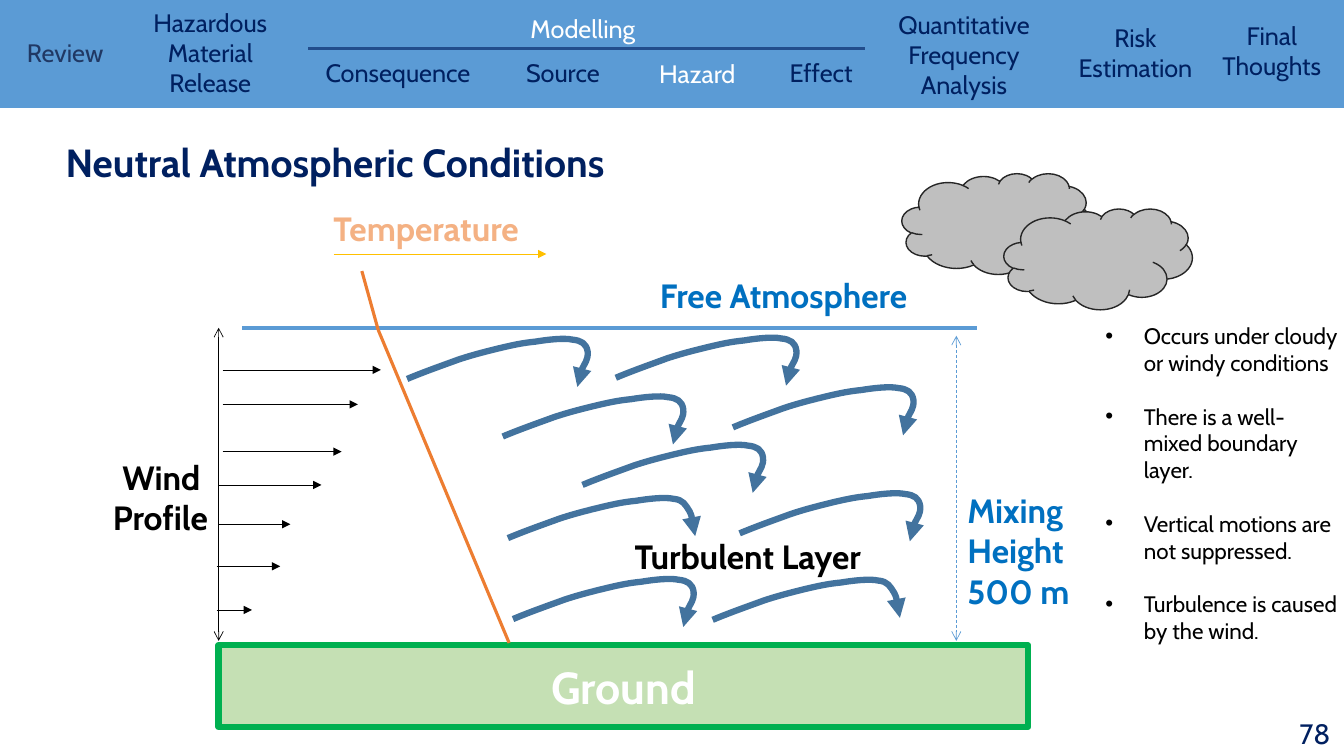
import pptx
import pptx.dml.color
import pptx.enum.dml
import pptx.enum.shapes
import pptx.enum.text
import pptx.oxml
import pptx.oxml.ns
import pptx.util
from lxml import etree

Cm = pptx.util.Cm
Pt = pptx.util.Pt
qn = pptx.oxml.ns.qn
ALIGN = pptx.enum.text.PP_ALIGN
ANCHOR = pptx.enum.text.MSO_ANCHOR
SHAPE = pptx.enum.shapes.MSO_SHAPE
DASH = pptx.enum.dml.MSO_LINE.DASH

NAVY, WHITE, BLACK = "002060", "FFFFFF", "000000"
SKY, BLUE, ORANGE = "5B9BD5", "0070C0", "ED7D31"


def colour(value):
    return pptx.dml.color.RGBColor.from_string(value)


def assign(target, values):
    for name, value in values.items():
        setattr(target, name, value)


class Diagram:
    font = "Cabin"

    def __init__(self, slide):
        self.slide = slide
        self.shapes = slide.shapes

    def fill_text(self, holder, lines, size, tint, bold=False, align=ALIGN.LEFT,
                  anchor=ANCHOR.TOP, gap=0, bullet=None):
        frame = holder.text_frame
        assign(frame, {"word_wrap": True, "vertical_anchor": anchor,
                       "auto_size": pptx.enum.text.MSO_AUTO_SIZE.NONE})
        frame.text = "\n".join(lines)
        for paragraph in frame.paragraphs:
            assign(paragraph, {"alignment": align, "space_after": Pt(gap)})
            assign(paragraph.runs[0].font,
                   {"name": self.font, "size": Pt(size), "bold": bold})
            paragraph.runs[0].font.color.rgb = colour(tint)
            if bullet:
                properties = paragraph._p.get_or_add_pPr()
                properties.set("marL", str(Cm(0.97)))
                properties.set("indent", str(-Cm(0.97)))
                etree.SubElement(properties, qn("a:buFont")).set("typeface", "Arial")
                etree.SubElement(properties, qn("a:buChar")).set("char", bullet)

    def title(self, place, text, **style):
        holder = self.shapes.title
        assign(holder, dict(zip(("left", "top", "width", "height"), map(Cm, place))))
        self.fill_text(holder, [text], **style)

    def text(self, place, *lines, **style):
        box = self.shapes.add_textbox(*map(Cm, place))
        self.fill_text(box, lines, **style)
        return box

    def shape(self, kind, place, fill, edge=None, width=1):
        body = self.shapes.add_shape(kind, *map(Cm, place))
        body.shadow.inherit = False
        body.fill.solid()
        body.fill.fore_color.rgb = colour(fill)
        if edge:
            self.stroke(body, edge, width)
        else:
            body.line.fill.background()
        return body

    def stroke(self, target, tint, width, dash=None, head=None, tail=None):
        target.line.color.rgb = colour(tint)
        assign(target.line, {"width": Pt(width), "dash_style": dash})
        outline = target._element.spPr.get_or_add_ln()
        for end, kind in (("a:headEnd", head), ("a:tailEnd", tail)):
            if kind:
                etree.SubElement(outline, qn(end)).set("type", kind)

    def line(self, start, finish, tint, width, **ends):
        connector = self.shapes.add_connector(
            pptx.enum.shapes.MSO_CONNECTOR.STRAIGHT, *map(Cm, start + finish))
        self.stroke(connector, tint, width, **ends)
        etree.SubElement(connector._element.spPr, qn("a:effectLst"))

    def curve(self, start, offsets, tint, width, **ends):
        left, top = start
        builder = self.shapes.build_freeform(Cm(left), Cm(top))
        builder.add_line_segments(
            [(Cm(left + dx), Cm(top + dy)) for dx, dy in offsets], close=False)
        eddy = builder.convert_to_shape()
        eddy.shadow.inherit = False
        eddy.fill.background()
        outline = next(eddy._element.iter(qn("a:path")))
        segments = outline.findall(qn("a:lnTo"))
        for first in range(0, len(segments), 3):
            bezier = etree.SubElement(outline, qn("a:cubicBezTo"))
            for segment in segments[first:first + 3]:
                bezier.append(segment[0])
                outline.remove(segment)
        self.stroke(eddy, tint, width, **ends)


NAVIGATION = [
    ("Review", (0.43, 0.81, 2.82, 1.02), "203864", ALIGN.LEFT),
    ("Hazardous Material Release", (3.23, 0.05, 4.14, 2.54), NAVY, ALIGN.CENTER),
    ("Modelling", (7.77, 0.2, 13.84, 1.02), WHITE, ALIGN.CENTER),
    ("Consequence", (7.77, 1.32, 4.52, 1.02), NAVY, ALIGN.CENTER),
    ("Source", (11.66, 1.32, 5.05, 1.02), NAVY, ALIGN.CENTER),
    ("Hazard", (15.49, 1.35, 4.17, 0.97), WHITE, ALIGN.CENTER),
    ("Effect", (18.47, 1.32, 4.45, 0.99), NAVY, ALIGN.CENTER),
    ("Quantitative Frequency Analysis", (22.07, 0.1, 4.45, 2.44), NAVY, ALIGN.CENTER),
    ("Risk Estimation", (26.39, 0.43, 4.45, 1.75), NAVY, ALIGN.CENTER),
    ("Final Thoughts", (30.25, 0.38, 3.6, 1.88), NAVY, ALIGN.CENTER),
]
WIND = [(5.61, 9.32, 9.6), (5.61, 10.19, 9.02), (5.61, 11.38, 8.61),
        (5.51, 12.22, 8.1), (5.51, 13.21, 7.32), (5.46, 14.27, 7.06),
        (5.46, 15.37, 6.35)]
RISE = [(0.43, -0.18), (0.86, -0.33), (1.27, -0.48),
        (1.65, -0.61), (2.06, -0.71), (2.39, -0.79),
        (2.69, -0.86), (2.92, -0.91), (3.23, -0.94),
        (3.53, -0.99), (3.96, -1.04), (4.17, -0.99)]
HOOK = RISE + [(4.39, -0.97), (4.52, -0.89), (4.55, -0.69),
               (4.57, -0.48), (4.24, -0.03), (4.29, 0.2)]
SWEEP = RISE + [(4.42, -0.97), (4.47, -0.84), (4.57, -0.69),
                (4.65, -0.53), (4.67, -0.28), (4.72, -0.05)]
EDDIES = [
    (HOOK, [(18.64, 13.44), (12.93, 15.6), (14.68, 12.22), (18.47, 10.77),
            (15.52, 9.52), (12.67, 11), (10.26, 9.55)]),
    (SWEEP, [(17.96, 15.62), (12.8, 13.56)]),
]


def main():
    deck = pptx.Presentation()
    assign(deck, {"slide_width": Cm(33.87), "slide_height": Cm(19.05)})
    diagram = Diagram(deck.slides.add_slide(deck.slide_layouts[5]))

    diagram.shape(SHAPE.RECTANGLE, (0, 0, 33.87, 2.72), SKY)
    for topic, place, tint, align in NAVIGATION:
        diagram.text(place, topic, size=18, tint=tint, align=align)
    diagram.line((7.77, 1.22), (21.79, 1.22), "224D8C", 2.25)

    diagram.title((1.4, 3.35, 32.39, 1.5), "Neutral Atmospheric Conditions",
                  size=28, tint=NAVY, bold=True)
    diagram.text((25.88, 17.98, 7.9, 1.02), "78", size=20, tint=NAVY,
                 align=ALIGN.RIGHT, anchor=ANCHOR.MIDDLE)

    ground = diagram.shape(SHAPE.RECTANGLE, (5.51, 16.26, 20.4, 2.06),
                           "C5E0B4", "00B050", 4.5)
    diagram.fill_text(ground, ["Ground"], size=32, tint=WHITE, bold=True,
                      align=ALIGN.CENTER, anchor=ANCHOR.MIDDLE)

    label = {"size": 24, "bold": True}
    diagram.line((6.1, 8.26), (24.61, 8.26), SKY, 3)
    diagram.text((16.38, 6.81, 7.85, 1.27), "Free Atmosphere", tint=BLUE, **label)
    diagram.line((24.1, 8.46), (24.1, 16.15), SKY, 0.5, dash=DASH,
                 head="arrow", tail="arrow")
    diagram.text((24.13, 12.22, 3.63, 3.33), "Mixing", "Height", "500 m",
                 tint=BLUE, **label)

    diagram.line((5.51, 8.26), (5.51, 16.15), BLACK, 0.5, head="arrow", tail="arrow")
    for start, height, finish in WIND:
        diagram.line((start, height), (finish, height), BLACK, 0.5, tail="triangle")
    diagram.text((2.16, 11.38, 3.33, 2.31), "Wind ", "Profile", tint=BLACK,
                 align=ALIGN.RIGHT, **label)

    diagram.line((12.83, 16.2), (9.53, 8.31), ORANGE, 2.25)
    diagram.line((9.53, 8.31), (9.12, 6.83), ORANGE, 2.25)
    diagram.text((8.15, 5.11, 6.07, 1.27), "Temperature", tint="F4B183", **label)
    diagram.line((8.41, 6.4), (13.77, 6.4), "FFC000", 0.5, tail="triangle")

    for offsets, starts in EDDIES:
        for start in starts:
            diagram.curve(start, offsets, "43739E", 4.5, tail="triangle")
    diagram.text((14.25, 13.39, 7.7, 1.27), "Turbulent Layer", tint=BLACK,
                 align=ALIGN.RIGHT, **label)
    for left, top in ((22.73, 4.37), (25.3, 5.26)):
        diagram.shape(SHAPE.CLOUD, (left, top, 4.75, 2.54), "BFBFBF", "262626")

    features = diagram.text(
        (27.61, 8, 6.25, 10.5),
        "Occurs under cloudy or windy conditions",
        "There is a well-mixed boundary layer.",
        "Vertical motions are not suppressed.",
        "Turbulence is caused by the wind.",
        size=16, tint=BLACK, gap=19, bullet="•")
    features.text_frame.margin_right = Cm(0.1)

    deck.save("out.pptx")


if __name__ == "__main__":
    main()
